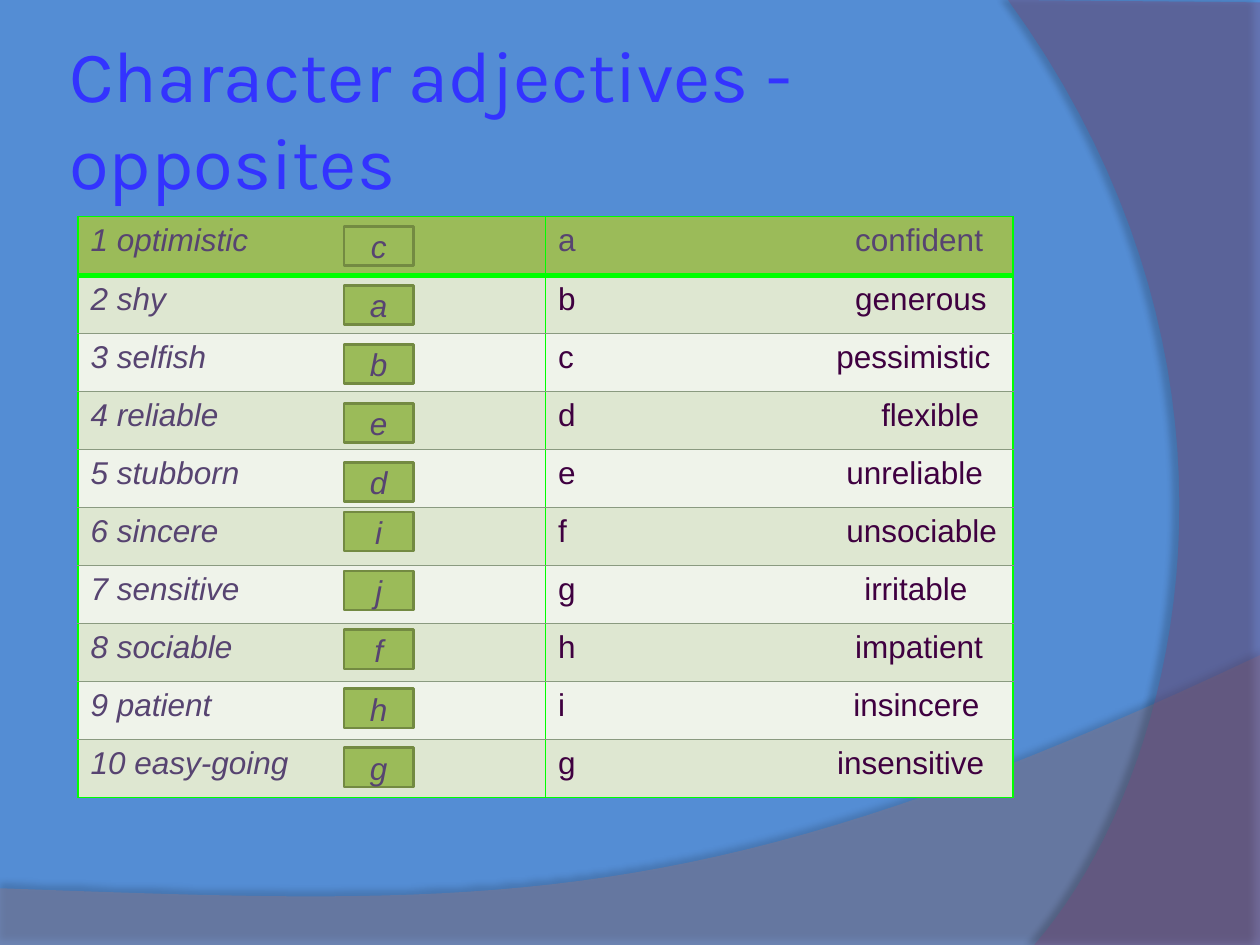
import pptx
import pptx.dml.color
import pptx.enum.shapes
import pptx.enum.text
import pptx.oxml
import pptx.oxml.ns
import pptx.util

Pt = pptx.util.Pt
GREEN, BORDER, RULE = "9BBB59", "00FF00", "8A9A80"
PURPLE, PLUM = "574471", "3F0040"
BANDS = ("EFF3EA", "DEE7D1")

# adjective, answer, option letter, option, tab stop of the option
ROWS = [
    ("1 optimistic", "c", "a", "confident", 169.7),
    ("2 shy", "a", "b", "generous", 169.7),
    ("3 selfish", "b", "c", "pessimistic", 158.9),
    ("4 reliable", "e", "d", "flexible", 184.6),
    ("5 stubborn", "d", "e", "unreliable", 164.6),
    ("6 sincere", "i", "f", "unsociable", 164.6),
    ("7 sensitive", "j", "g", "irritable", 174.9),
    ("8 sociable", "f", "h", "impatient", 169.7),
    ("9 patient", "h", "i", "insincere", 168.6),
    ("10 easy-going", "g", "g", "insensitive", 159.4),
]


def rgb(value):
    return pptx.dml.color.RGBColor.from_string(value)


def xml(tag, attributes="", inner=""):
    namespace = pptx.oxml.ns.nsdecls("a")
    return pptx.oxml.parse_xml(f"<a:{tag} {namespace} {attributes}>{inner}</a:{tag}>")


def write(frame, text, size=18, font="Arial", color=PURPLE, italic=False,
          align=None, anchor=None, tab=None):
    para = frame.paragraphs[0]
    if tab is not None:
        stop = f'<a:tab pos="{Pt(tab)}" algn="l"/>'
        para._p.get_or_add_pPr().append(xml("tabLst", inner=stop))
    if align is not None:
        para.alignment = align
    if anchor is not None:
        frame.vertical_anchor = anchor
    span = para.add_run()
    span.text = text
    span.font.size = Pt(size)
    span.font.name = font
    span.font.italic = italic
    span.font.color.rgb = rgb(color)


def curve(start, first, second, end, steps=40):
    """Points along a cubic curve, without its start."""
    points = []
    for step in range(1, steps + 1):
        t = step / steps
        weights = ((1 - t) ** 3, 3 * t * (1 - t) ** 2, 3 * t * t * (1 - t), t ** 3)
        points.append(tuple(
            sum(w * p[axis] for w, p in zip(weights, (start, first, second, end)))
            for axis in (0, 1)))
    return points


def add_swoosh(page, points, color, alpha, shadow_alpha, distance, direction):
    points = [(Pt(x), Pt(y)) for x, y in points]
    builder = page.shapes.build_freeform(*points[0])
    builder.add_line_segments(points[1:], close=True)
    swoosh = builder.convert_to_shape()
    swoosh.shadow.inherit = False
    swoosh.line.fill.background()
    swoosh.fill.solid()
    swoosh.fill.fore_color.rgb = rgb(color)
    properties = swoosh._element.spPr
    fill_color = properties.find(".//" + pptx.oxml.ns.qn("a:srgbClr"))
    fill_color.append(xml("alpha", f'val="{alpha * 1000}"'))
    effects = properties.find(pptx.oxml.ns.qn("a:effectLst"))
    effects.append(xml(
        "outerShdw",
        f'blurRad="{Pt(4)}" dist="{Pt(distance)}" dir="{direction * 60000}"',
        f'<a:srgbClr val="000000"><a:alpha val="{shadow_alpha * 1000}"/></a:srgbClr>'))


def add_title(page, text):
    box = page.shapes.add_textbox(Pt(36), Pt(21.6), Pt(588), Pt(90))
    frame = box.text_frame
    frame.word_wrap = True
    frame.margin_left = frame.margin_right = Pt(3.6)
    write(frame, text, size=41.4, font="Karla", color="3333FF",
          anchor=pptx.enum.text.MSO_ANCHOR.MIDDLE)


def set_borders(cell, top, bottom):
    sides = {"lnL": (BORDER, 1), "lnR": (BORDER, 1), "lnT": top, "lnB": bottom}
    properties = cell._tc.get_or_add_tcPr()
    for index, (side, (color, width)) in enumerate(sides.items()):
        properties.insert(index, xml(
            side, f'w="{Pt(width)}"',
            f'<a:solidFill><a:srgbClr val="{color}"/></a:solidFill>'))


def add_word_table(page):
    table = page.shapes.add_table(
        len(ROWS), 2, Pt(44.6), Pt(123.8), Pt(534.4), Pt(331.9)).table
    table.horz_banding = False
    outer, header, inner = (BORDER, 1), (BORDER, 3), (RULE, 0.5)
    lines = [outer, header] + [inner] * (len(ROWS) - 2) + [outer]
    for index, (adjective, _, letter, option, tab) in enumerate(ROWS):
        table.rows[index].height = Pt(33.14 if index else 33.6)
        left, right = table.cell(index, 0), table.cell(index, 1)
        for cell in (left, right):
            cell.fill.solid()
            cell.fill.fore_color.rgb = rgb(BANDS[index % 2] if index else GREEN)
            set_borders(cell, lines[index], lines[index + 1])
        write(left.text_frame, adjective, italic=True)
        write(right.text_frame, f"{letter}\t{option}", tab=tab,
              color=PLUM if index else PURPLE)


def add_answer(page, letter, top):
    box = page.shapes.add_shape(pptx.enum.shapes.MSO_SHAPE.RECTANGLE,
                                Pt(196.6), Pt(top), Pt(39.6), Pt(22.5))
    box.shadow.inherit = False
    box.fill.solid()
    box.fill.fore_color.rgb = rgb(GREEN)
    box.line.color.rgb = rgb("738A42")
    box.line.width = Pt(1.5)
    write(box.text_frame, letter, italic=True,
          align=pptx.enum.text.PP_ALIGN.CENTER,
          anchor=pptx.enum.text.MSO_ANCHOR.MIDDLE)


def main():
    deck = pptx.Presentation()
    deck.slide_width, deck.slide_height = Pt(720), Pt(540)
    page = deck.slides.add_slide(deck.slide_layouts[6])
    page.background.fill.solid()
    page.background.fill.fore_color.rgb = rgb("548DD4")

    # Background swooshes
    floor = [(0, 507.6), (0, 540.5), (720, 540.5), (720, 374.4)]
    floor += curve(floor[-1], (402.5, 524.9), (281.5, 517.7), floor[0])
    add_swoosh(page, floor, "8B7A8C", 45, 35, 3.5, 270)
    side = [(720, 1.4), (720, 540), (591, 540)]
    side += curve(side[-1], (673.2, 445.7), (733, 216), (576, 0))
    add_swoosh(page, side, "7B4C7D", 40, 45, 4, 180)

    # Title and word list
    add_title(page, "Character adjectives - opposites")
    add_word_table(page)

    # Answer boxes, in two runs of five
    for index, row in enumerate(ROWS):
        group, place = divmod(index, 5)
        add_answer(page, row[1], (129.4, 292.5)[group] + 33.7 * place)

    deck.save("out.pptx")


if __name__ == "__main__":
    main()
